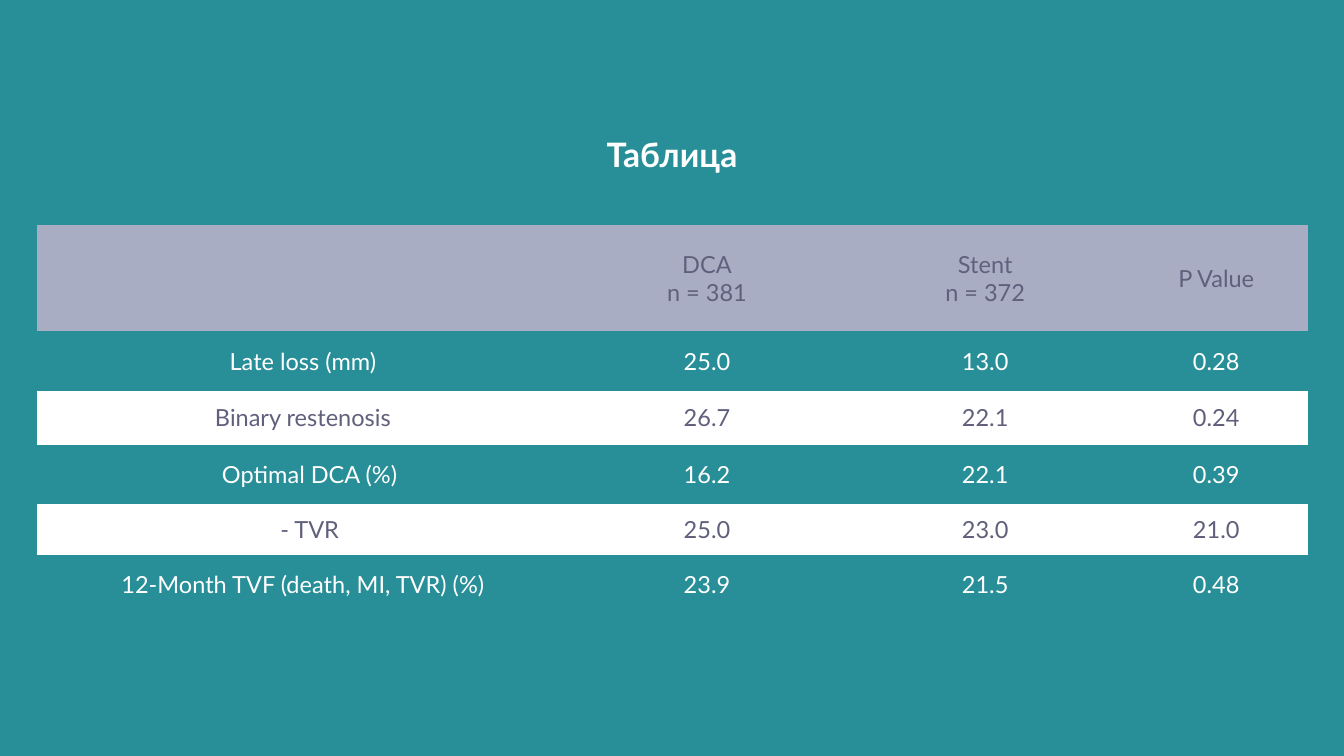
"""Build a slide with a titled table of clinical results."""
from pptx import Presentation
from pptx.dml.color import RGBColor
from pptx.enum.text import MSO_ANCHOR, PP_ALIGN
from pptx.oxml.ns import qn
from pptx.util import Inches, Pt

COLORS = {"teal": "288F98", "header": "A8ADC4", "ink": "60607D", "white": "FFFFFF"}
NO_GRID_STYLE = "{2D5ABB26-0587-4C30-8999-92F81FD0307C}"
COL_WIDTHS = [4.39, 2.29, 2.31, 1.51]
ROW_HEIGHTS = [0.88, 0.49, 0.45, 0.49, 0.42, 0.48]
ROWS = [
    ["", "DCA\nn = 381", "Stent\nn = 372", "P Value"],
    ["Late loss (mm)", "25.0", "13.0", "0.28"],
    ["Binary restenosis", "26.7", "22.1", "0.24"],
    ["Optimal DCA (%)", "16.2", "22.1", "0.39"],
    ["- TVR", "25.0", "23.0", "21.0"],
    ["12-Month TVF (death, MI, TVR) (%)", "23.9", "21.5", "0.48"],
]
INDENTED = {"Optimal DCA (%)", "- TVR"}


def rgb(name):
    return RGBColor.from_string(COLORS[name])


def write(tf, text, size=14, color="white", bold=False, spacing=None):
    tf.text = text
    tf.word_wrap = True
    for p in tf.paragraphs:
        p.alignment = PP_ALIGN.CENTER
        p.line_spacing = spacing
        for r in p.runs:
            r.font.name = "Lato"
            r.font.size = Pt(size)
            r.font.bold = bold
            r.font.color.rgb = rgb(color)


def add_title(s, text):
    sp = s.shapes.add_textbox(Inches(0), Inches(1), Inches(11.11), Inches(0.59))
    tf = sp.text_frame
    tf.vertical_anchor = MSO_ANCHOR.MIDDLE
    tf.margin_left = tf.margin_right = Inches(0.05)
    write(tf, text, size=20, bold=True, spacing=0.9)


def format_cell(cell, text, fill, color):
    cell.vertical_anchor = MSO_ANCHOR.MIDDLE
    cell.margin_left = Inches(0.22 if text in INDENTED else 0.11)
    cell.margin_right = Inches(0.11)
    cell.margin_top = cell.margin_bottom = Inches(0.06)
    if fill:
        cell.fill.solid()
        cell.fill.fore_color.rgb = rgb(fill)
    else:
        cell.fill.background()
    write(cell.text_frame, text, color=color)


def row_colors(i):
    if i == 0:
        return "header", "ink"
    return ("white", "ink") if i % 2 == 0 else (None, "white")


def add_results_table(s):
    frame = s.shapes.add_table(
        len(ROWS), len(COL_WIDTHS), Inches(0.31), Inches(1.86),
        Inches(sum(COL_WIDTHS)), Inches(sum(ROW_HEIGHTS)))
    table = frame.table
    table.horz_banding = False
    frame._element.find(".//" + qn("a:tableStyleId")).text = NO_GRID_STYLE
    for col, width in zip(table.columns, COL_WIDTHS):
        col.width = Inches(width)
    for i, (row, height) in enumerate(zip(table.rows, ROW_HEIGHTS)):
        row.height = Inches(height)
        fill, color = row_colors(i)
        for cell, text in zip(row.cells, ROWS[i]):
            format_cell(cell, text, fill, color)


def main():
    prs = Presentation()
    prs.slide_width, prs.slide_height = Inches(11.11), Inches(6.25)
    s = prs.slides.add_slide(prs.slide_layouts[6])
    s.background.fill.solid()
    s.background.fill.fore_color.rgb = rgb("teal")
    add_title(s, "Таблица")
    add_results_table(s)
    prs.save("out.pptx")


if __name__ == "__main__":
    main()
